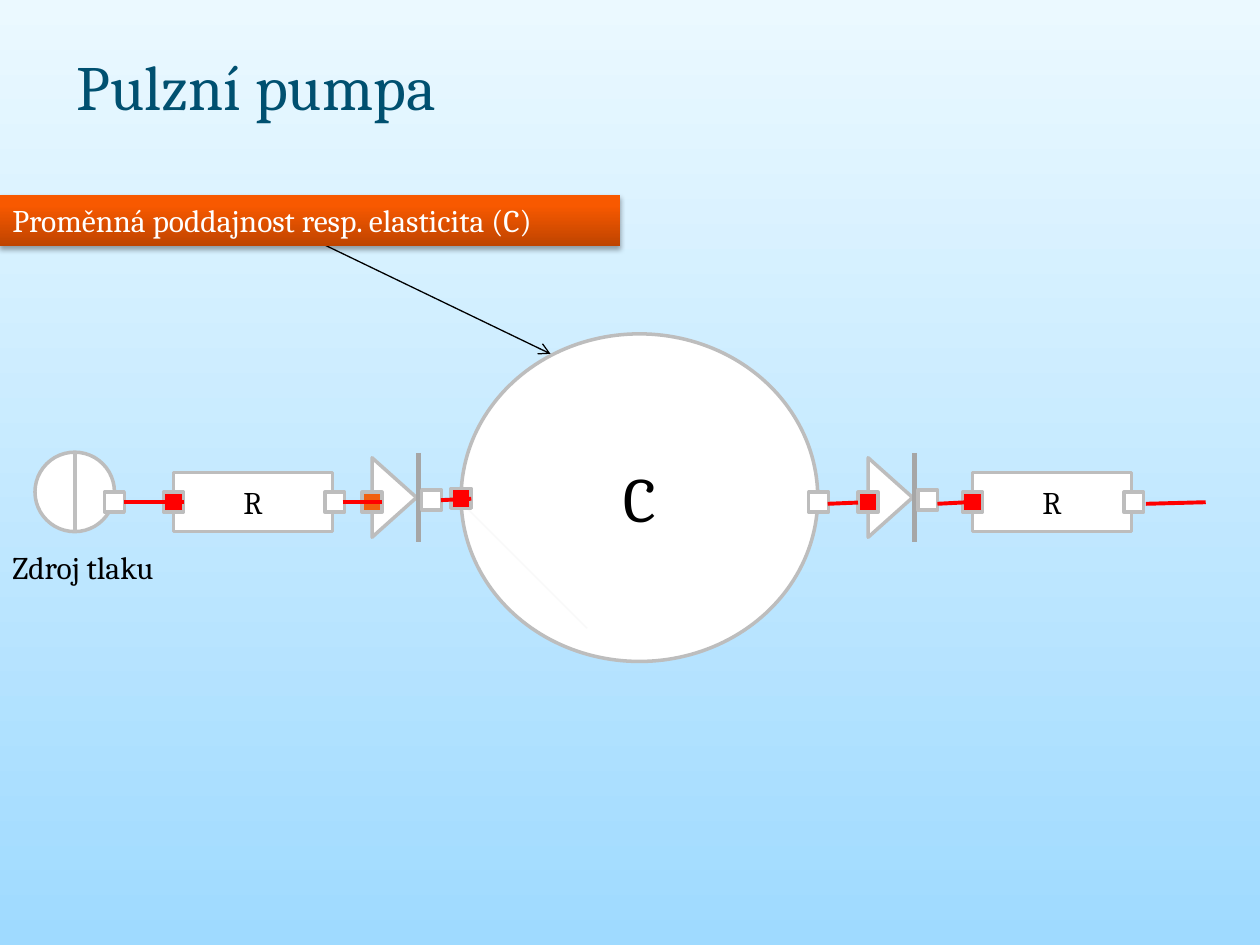
from lxml import etree
from pptx import Presentation
from pptx.dml.color import RGBColor
from pptx.enum import shapes, text
from pptx.oxml import ns
from pptx.util import Pt

FONT = "Cambria"
WHITE, BLACK, RED, ORANGE = "FFFFFF", "000000", "FF0000", "F1600F"
OUTLINE, DIVIDER, BAR = "BDBDBD", "BFBFBF", "A6A6A6"
PORT = 11.4      # side of a port square
AXIS = 287       # height at which the parts are wired together


def color(value):
    return RGBColor.from_string(value)


def sub(parent, tag, **attrs):
    return etree.SubElement(parent, ns.qn(tag), {k: str(v) for k, v in attrs.items()})


def set_gradient(fill, angle, *stops):
    fill.gradient()
    fill.gradient_angle = angle
    for stop, (position, value) in zip(fill.gradient_stops, stops):
        stop.position = position
        stop.color.rgb = color(value)


def write(sp, words, size=18, fill=BLACK, align=text.PP_ALIGN.LEFT,
          anchor=text.MSO_ANCHOR.MIDDLE, wrap=True, grow=False):
    tf = sp.text_frame
    tf.word_wrap = wrap
    tf.vertical_anchor = anchor
    tf.auto_size = (text.MSO_AUTO_SIZE.SHAPE_TO_FIT_TEXT if grow
                    else text.MSO_AUTO_SIZE.NONE)
    p = tf.paragraphs[0]
    p.alignment = align
    r = p.add_run()
    r.text = words
    r.font.name, r.font.size = FONT, Pt(size)
    r.font.color.rgb = color(fill)


def add_shape(slide, kind, left, top, width, height, fill=WHITE):
    sp = slide.shapes.add_shape(kind, Pt(left), Pt(top), Pt(width), Pt(height))
    sp.shadow.inherit = False
    sp.fill.solid()
    sp.fill.fore_color.rgb = color(fill)
    sp.line.color.rgb = color(OUTLINE)
    sp.line.width = Pt(2)
    return sp


def add_line(slide, x1, y1, x2, y2, stroke=RED, width=2.25, arrow=False):
    line = slide.shapes.add_connector(shapes.MSO_CONNECTOR.STRAIGHT,
                                      Pt(x1), Pt(y1), Pt(x2), Pt(y2))
    line.line.color.rgb = color(stroke)
    line.line.width = Pt(width)
    if arrow:
        sub(line.line._get_or_add_ln(), "a:tailEnd", type="arrow")
    sub(line._element.spPr, "a:effectLst")


def add_port(slide, cx, cy=AXIS, fill=WHITE):
    add_shape(slide, shapes.MSO_SHAPE.RECTANGLE, cx - PORT / 2, cy - PORT / 2,
              PORT, PORT, fill)


def add_title(slide, left, top, width, height):
    sp = slide.shapes.title
    sp.left, sp.top, sp.width, sp.height = Pt(left), Pt(top), Pt(width), Pt(height)
    write(sp, "Pulzní pumpa", size=36, fill="005070")


def add_banner(slide, left, top, width, height, target):
    # Pointer first, so that the banner covers its start
    add_line(slide, left + width / 2 + 7.2, top + height - 1, *target,
             stroke=BLACK, width=0.75, arrow=True)
    sp = add_shape(slide, shapes.MSO_SHAPE.RECTANGLE, left, top, width, height)
    set_gradient(sp.fill, 90, (0, "BF4400"), (0.8, "F85900"))
    sp.line.fill.background()
    shadow = sub(sp._element.spPr.find(ns.qn("a:effectLst")), "a:outerShdw",
                 blurRad=Pt(3.1), dist=Pt(1.8), dir=5400000, rotWithShape=0)
    sub(sub(shadow, "a:srgbClr", val=BLACK), "a:alpha", val=35000)
    write(sp, "Proměnná poddajnost resp. elasticita (C)", fill=WHITE,
          anchor=text.MSO_ANCHOR.TOP, grow=True)


def add_source(slide, left, top, size):
    add_shape(slide, shapes.MSO_SHAPE.OVAL, left, top, size, size)
    middle = left + size / 2
    add_line(slide, middle, top, middle, top + size, stroke=DIVIDER)
    add_port(slide, left + size)
    label = slide.shapes.add_textbox(0, Pt(top + 51.2), Pt(103.7), Pt(29))
    write(label, "Zdroj tlaku", anchor=text.MSO_ANCHOR.TOP, wrap=False, grow=True)


def add_resistor(slide, left, top, width, height):
    sp = add_shape(slide, shapes.MSO_SHAPE.RECTANGLE, left, top, width, height)
    write(sp, "R", align=text.PP_ALIGN.CENTER)
    add_port(slide, left, fill=RED)
    add_port(slide, left + width + 1.4)


def add_valve(slide, left, top, width, height, inlet):
    # The triangle is laid out upright, then turned to point right
    base, depth = 45.4, width - 1.2
    sp = add_shape(slide, shapes.MSO_SHAPE.ISOSCELES_TRIANGLE,
                   left + (depth - base) / 2, top + (height - depth) / 2, base, depth)
    sp.rotation = 90
    right = left + width
    add_line(slide, right, top, right, top + height, stroke=BAR, width=3)
    add_port(slide, left, fill=inlet)
    add_port(slide, right + 7.5, AXIS - 1.3)


def add_chamber(slide, left, top, width, height):
    sp = add_shape(slide, shapes.MSO_SHAPE.OVAL, left, top, width, height)
    write(sp, "C", size=36, align=text.PP_ALIGN.CENTER)
    add_line(slide, left, AXIS, left + 72, AXIS + 72, stroke="F9F9F9", width=0.75)
    add_port(slide, left, AXIS - 2.2, RED)
    add_port(slide, left + width + 0.5)


def add_circuit(slide):
    add_source(slide, 20, 258.4, 45.4)
    for left in (99.2, 555.8):
        add_resistor(slide, left, 270, 90.7, 33.8)
    for left, inlet in ((212.6, ORANGE), (496.1, RED)):
        add_valve(slide, left, 258.8, 26.6, 51, inlet)
    add_chamber(slide, 263.5, 190.8, 203.8, 187.2)
    # Wires between the ports
    for x1, y1, x2, y2 in ((70.8, 287, 105, 287), (195.8, 287, 218.2, 287),
                           (252, 285.8, 269.3, 285), (473, 287.9, 490.3, 287.2),
                           (535.7, 287.9, 553, 287), (654.8, 287.9, 689, 287)):
        add_line(slide, x1, y1, x2, y2)


def main():
    prs = Presentation()
    prs.slide_width, prs.slide_height = Pt(720), Pt(540)
    slide = prs.slides.add_slide(prs.slide_layouts[5])
    set_gradient(slide.background.fill, 270, (0, "EBF9FF"), (1, "9FDAFF"))
    add_title(slide, 36.7, 9.4, 647.3, 79.2)
    add_circuit(slide)
    add_banner(slide, 0, 111.4, 354.2, 29, target=(314.6, 202.2))
    prs.save("out.pptx")


if __name__ == "__main__":
    main()
